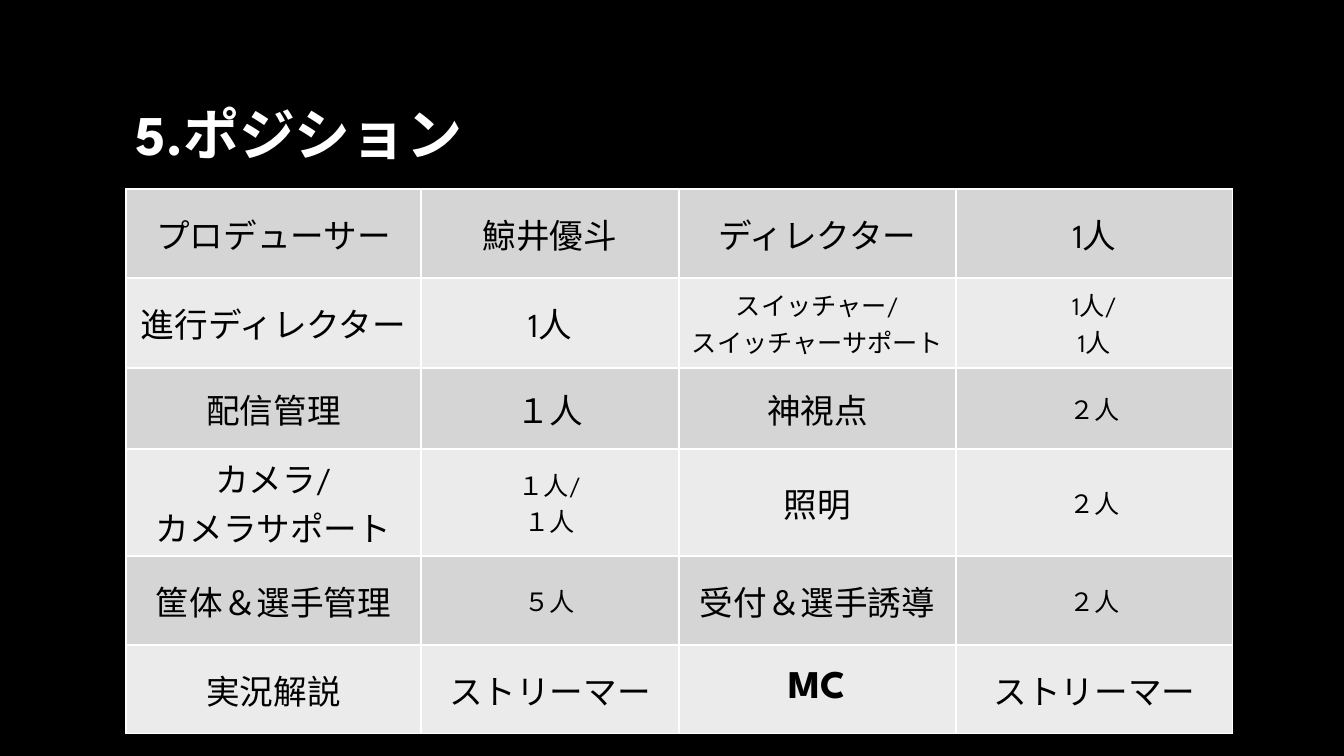
from lxml.etree import SubElement
from pptx import Presentation
from pptx.dml.color import RGBColor
from pptx.enum.text import MSO_ANCHOR, PP_ALIGN
from pptx.oxml import parse_xml
from pptx.oxml.ns import nsdecls, qn
from pptx.util import Pt

PX = 914400 / 100.8
FONT = "League Spartan"
COLUMN_WIDTHS = [295, 258, 277, 277]
ROW_HEIGHTS = [89, 90, 81, 107, 89, 89]
ROW_FILLS = ["D5D5D5", "EBEBEB"]
# Each cell holds its text and its size in points.
POSITIONS = [
    [("プロデューサー", 24), ("鯨井優斗", 24), ("ディレクター", 24), ("1人", 24)],
    [("進行ディレクター", 24), ("1人", 24),
     ("スイッチャー/\vスイッチャーサポート", 18), ("1人/\n1人", 18)],
    [("配信管理", 24), ("１人", 24), ("神視点", 24), ("２人", 18)],
    [("カメラ/\nカメラサポート", 24), ("１人/\n１人", 18), ("照明", 24), ("２人", 18)],
    [("筐体＆選手管理", 24), ("５人", 18), ("受付＆選手誘導", 24), ("２人", 18)],
    [("実況解説", 24), ("ストリーマー", 24), ("MC", 28), ("ストリーマー", 24)],
]


def px(*lengths):
    """Turn pixel lengths into EMU."""
    return [round(length * PX) for length in lengths]


def format_runs(text_frame, size, color, bold):
    for paragraph in text_frame.paragraphs:
        for run in paragraph.runs:
            run.font.size = Pt(size)
            run.font.bold = bold
            run.font.color.rgb = RGBColor.from_string(color)
            run.font.name = FONT


presentation = Presentation()
presentation.slide_width, presentation.slide_height = px(1344, 756)
slide = presentation.slides.add_slide(presentation.slide_layouts[6])
slide.background.fill.solid()
slide.background.fill.fore_color.rgb = RGBColor.from_string("000000")

title = slide.shapes.add_textbox(*px(126, 76, 366, 114))
title.text_frame.word_wrap = True
title.text_frame.vertical_anchor = MSO_ANCHOR.MIDDLE
title.text_frame.text = "5.ポジション"
format_runs(title.text_frame, 40, "FFFFFF", True)
title_run = title.text_frame.paragraphs[0].runs[0]
SubElement(title_run.font._element, qn("a:ea"), typeface=FONT)

table = slide.shapes.add_table(
    len(ROW_HEIGHTS), len(COLUMN_WIDTHS),
    *px(126, 189, sum(COLUMN_WIDTHS), sum(ROW_HEIGHTS))).table
for column, width in zip(table.columns, px(*COLUMN_WIDTHS)):
    column.width = width
for row, height in zip(table.rows, px(*ROW_HEIGHTS)):
    row.height = height

for row_index, positions in enumerate(POSITIONS):
    for column_index, (text, size) in enumerate(positions):
        cell = table.cell(row_index, column_index)
        cell.text_frame.text = text
        cell.vertical_anchor = MSO_ANCHOR.MIDDLE
        for paragraph in cell.text_frame.paragraphs:
            paragraph.alignment = PP_ALIGN.CENTER
        format_runs(cell.text_frame, size, "000000", text == "MC")
        cell.fill.solid()
        cell.fill.fore_color.rgb = RGBColor.from_string(ROW_FILLS[row_index % 2])
        properties = cell._tc.get_or_add_tcPr()
        for position, side in enumerate(["lnL", "lnR", "lnT", "lnB"]):
            properties.insert(position, parse_xml(
                f'<a:{side} {nsdecls("a")} w="{Pt(1)}"><a:solidFill>'
                f'<a:srgbClr val="FFFFFF"/></a:solidFill></a:{side}>'))

presentation.save("out.pptx")
